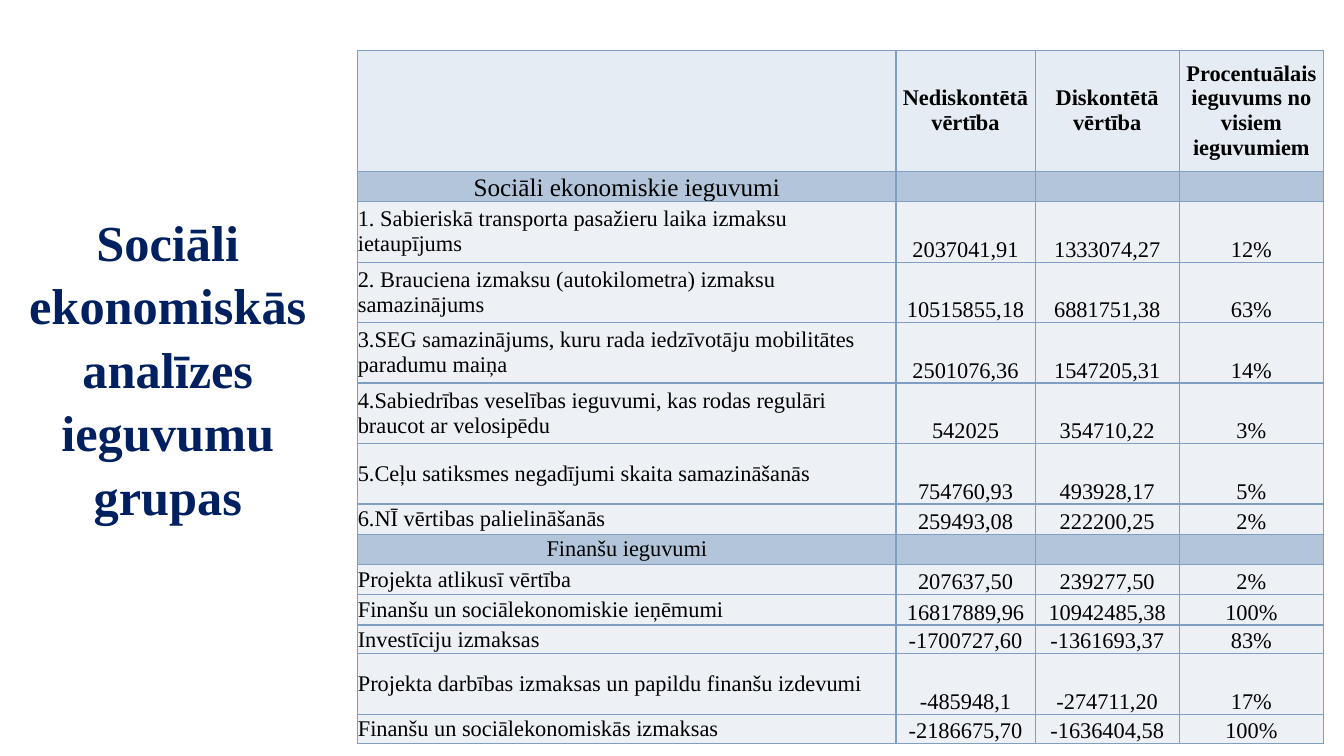
from dataclasses import dataclass

from lxml import etree
from pptx import Presentation
from pptx.dml.color import RGBColor
from pptx.enum.text import MSO_ANCHOR, MSO_AUTO_SIZE, PP_ALIGN
from pptx.oxml.ns import qn
from pptx.slide import Slide
from pptx.table import Table, _Cell
from pptx.util import Pt

CENTER, LEFT = PP_ALIGN.CENTER, PP_ALIGN.LEFT
TOP, MIDDLE, BOTTOM = MSO_ANCHOR.TOP, MSO_ANCHOR.MIDDLE, MSO_ANCHOR.BOTTOM
GROW = MSO_AUTO_SIZE.SHAPE_TO_FIT_TEXT
FONT = "Times New Roman"
COLORS = {
    "title": "002060",
    "text": "000000",
    "header": "E6ECF3",
    "section": "B3C5DA",
    "benefit": "EDF0F4",
    "border": "809EC2",
}
COLUMN_WIDTHS = (384.4, 99.4, 103, 103)
TALL, MEDIUM, SHORT = 43.2, 21.6, 20.6


@dataclass(frozen=True)
class BenefitRow:
    height: float
    label: str
    values: tuple[str, str, str] = ("", "", "")
    kind: str = "benefit"
    label_size: float = 16
    label_anchor: MSO_ANCHOR = MIDDLE


ROWS = (
    BenefitRow(86.4, "", ("Nediskontētā vērtība", "Diskontētā vērtība",
                          "Procentuālais ieguvums no visiem ieguvumiem"), "header"),
    BenefitRow(SHORT, "Sociāli ekonomiskie ieguvumi", kind="section",
               label_size=18, label_anchor=BOTTOM),
    BenefitRow(TALL, "1. Sabieriskā transporta pasažieru laika izmaksu ietaupījums",
               ("2037041,91", "1333074,27", "12%")),
    BenefitRow(TALL, "2. Brauciena izmaksu (autokilometra) izmaksu samazinājums",
               ("10515855,18", "6881751,38", "63%")),
    BenefitRow(TALL, "3.SEG samazinājums, kuru rada iedzīvotāju mobilitātes paradumu maiņa",
               ("2501076,36", "1547205,31", "14%")),
    BenefitRow(TALL, "4.Sabiedrības veselības ieguvumi, kas rodas regulāri braucot ar velosipēdu",
               ("542025", "354710,22", "3%")),
    BenefitRow(TALL, "5.Ceļu satiksmes negadījumi skaita samazināšanās",
               ("754760,93", "493928,17", "5%")),
    BenefitRow(MEDIUM, "6.NĪ vērtibas palielināšanās", ("259493,08", "222200,25", "2%")),
    BenefitRow(MEDIUM, "Finanšu ieguvumi", kind="section"),
    BenefitRow(MEDIUM, "Projekta atlikusī vērtība", ("207637,50", "239277,50", "2%")),
    BenefitRow(MEDIUM, "Finanšu un sociālekonomiskie ieņēmumi",
               ("16817889,96", "10942485,38", "100%")),
    BenefitRow(SHORT, "Investīciju izmaksas", ("-1700727,60", "-1361693,37", "83%")),
    BenefitRow(TALL, "Projekta darbības izmaksas un papildu finanšu izdevumi",
               ("-485948,1", "-274711,20", "17%")),
    BenefitRow(SHORT, "Finanšu un sociālekonomiskās izmaksas",
               ("-2186675,70", "-1636404,58", "100%")),
)


def add_borders(cell: _Cell) -> None:
    properties = cell._tc.get_or_add_tcPr()
    for side in ("a:lnL", "a:lnR", "a:lnT", "a:lnB"):
        border = etree.SubElement(properties, qn(side), w=str(Pt(1)))
        fill = etree.SubElement(border, qn("a:solidFill"))
        etree.SubElement(fill, qn("a:srgbClr"), val=COLORS["border"])


def fill_cell(cell: _Cell, text: str, kind: str, size: float,
              alignment: PP_ALIGN, anchor: MSO_ANCHOR) -> None:
    add_borders(cell)
    cell.fill.solid()
    cell.fill.fore_color.rgb = RGBColor.from_string(COLORS[kind])
    cell.margin_left = cell.margin_right = cell.margin_top = cell.margin_bottom = 0
    cell.vertical_anchor = anchor
    cell.text_frame.text = text
    paragraph = cell.text_frame.paragraphs[0]
    paragraph.alignment = alignment
    for run in paragraph.runs:
        run.font.name = FONT
        run.font.size = Pt(size)
        run.font.bold = kind == "header"
        run.font.color.rgb = RGBColor.from_string(COLORS["text"])


def fill_row(benefits: Table, index: int, row: BenefitRow) -> None:
    benefits.rows[index].height = Pt(row.height)
    label_alignment = LEFT if row.kind == "benefit" else CENTER
    fill_cell(benefits.cell(index, 0), row.label, row.kind, row.label_size,
              label_alignment, row.label_anchor)
    value_anchor = MIDDLE if row.kind == "header" else BOTTOM
    for column, value in enumerate(row.values, start=1):
        fill_cell(benefits.cell(index, column), value, row.kind, 16, CENTER, value_anchor)


def add_benefits(slide: Slide) -> None:
    height = sum(row.height for row in ROWS)
    benefits = slide.shapes.add_table(
        len(ROWS), len(COLUMN_WIDTHS),
        Pt(255.6), Pt(36), Pt(sum(COLUMN_WIDTHS)), Pt(height)).table
    benefits.horz_banding = False
    for column, width in zip(benefits.columns, COLUMN_WIDTHS):
        column.width = Pt(width)
    for index, row in enumerate(ROWS):
        fill_row(benefits, index, row)


def format_title(slide: Slide) -> None:
    title = slide.shapes.title
    title.left, title.top, title.width, title.height = Pt(11.5), Pt(144.7), Pt(216.7), Pt(225.4)
    frame = title.text_frame
    frame.text = "Sociāli ekonomiskās analīzes ieguvumu grupas"
    frame.word_wrap = True
    frame.auto_size = GROW
    frame.vertical_anchor = TOP
    paragraph = frame.paragraphs[0]
    paragraph.alignment = CENTER
    paragraph.line_spacing = 1.05
    font = paragraph.runs[0].font
    font.name = FONT
    font.size = Pt(36)
    font.bold = True
    font.color.rgb = RGBColor.from_string(COLORS["title"])


def main() -> None:
    presentation = Presentation()
    presentation.slide_width, presentation.slide_height = Pt(960), Pt(540)
    slide = presentation.slides.add_slide(presentation.slide_layouts.get_by_name("Title Only"))
    format_title(slide)
    add_benefits(slide)
    presentation.save("out.pptx")


if __name__ == "__main__":
    main()
